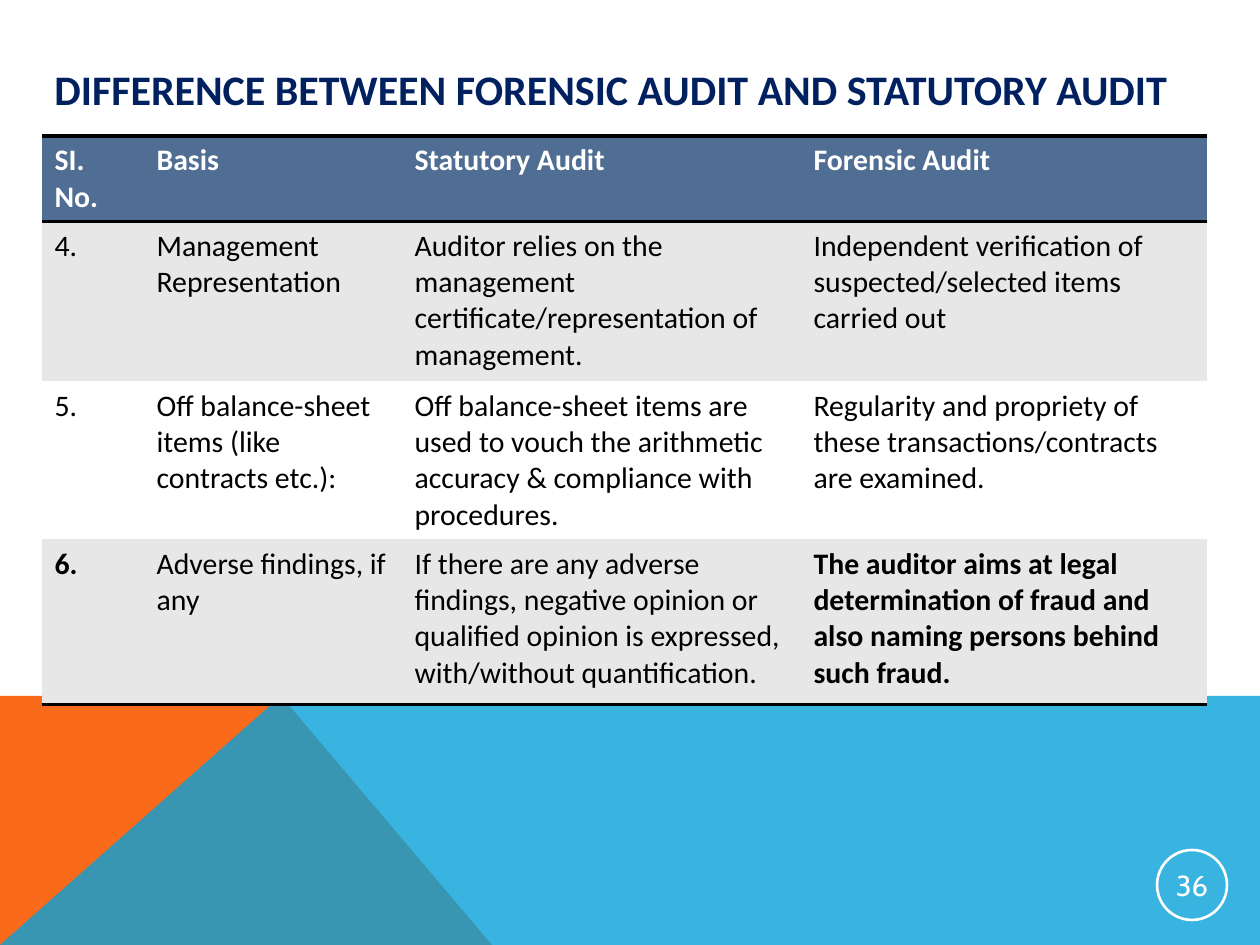
from lxml.etree import SubElement
from pptx import Presentation
from pptx.dml.color import RGBColor
from pptx.enum.shapes import MSO_SHAPE as Shape
from pptx.enum.text import MSO_ANCHOR as Anchor, PP_ALIGN as Align
from pptx.oxml import parse_xml
from pptx.oxml.ns import nsdecls, qn
from pptx.util import Pt

# Content
TITLE = "DIFFERENCE BETWEEN FORENSIC AUDIT AND STATUTORY AUDIT"
PAGE_NUMBER = "36"
ROWS = [
    ("SI. No.", "Basis", "Statutory Audit", "Forensic Audit"),
    ("4.", "Management Representation",
     "Auditor relies on the management certificate/representation of management.",
     "Independent verification of suspected/selected items carried out"),
    ("5.", "Off balance-sheet items (like contracts etc.):",
     "Off balance-sheet items are used to vouch the arithmetic accuracy & "
     "compliance with procedures.",
     "Regularity and propriety of these transactions/contracts are examined."),
    ("6.", "Adverse findings, if any",
     "If there are any adverse findings, negative opinion or qualified opinion "
     "is expressed, with/without quantification.",
     "The auditor aims at legal determination of fraud and also naming persons "
     "behind such fraud."),
]
BOLD_CELLS = {(3, 0), (3, 3)}

# Layout in px, 126 to the inch
SCALE = 914400 / 126
WIDTH, HEIGHT = 1260, 945
LEFT, CONTENT_WIDTH = 42, 1165
BAND_TOP, PEAK_X = 696, 281
COLUMN_WIDTHS = [102, 258, 399, 406]
ROW_HEIGHTS = [82, 160, 138, 165]

COLORS = {
    "orange": "F96A1B", "blue": "08A1D9", "navy": "002060", "header": "506E94",
    "stripe": "E7E7E7", "white": "FFFFFF", "black": "000000",
}


def px(value):
    return round(value * SCALE)


def box(*lengths):
    return [px(length) for length in lengths]


def color(name):
    return RGBColor.from_string(COLORS[name])


def paint(fill, name):
    fill.solid()
    fill.fore_color.rgb = color(name)


def write(text_frame, text, font_name, size, color_name, bold=False):
    text_frame.text = text
    font = text_frame.paragraphs[0].runs[0].font
    font.name, font.size, font.bold = font_name, Pt(size), bold
    font.color.rgb = color(color_name)


def add_band(slide, points, color_name):
    builder = slide.shapes.build_freeform(*points[0], scale=SCALE)
    builder.add_line_segments(points[1:], close=True)
    band = builder.convert_to_shape()
    band.shadow.inherit = False
    paint(band.fill, color_name)
    band.line.fill.background()
    return band


def set_borders(cell, ruled_sides):
    properties = cell._tc.get_or_add_tcPr()
    for index, side in enumerate(("lnL", "lnR", "lnT", "lnB")):
        if side in ruled_sides:
            content = f'<a:solidFill><a:srgbClr val="{COLORS["black"]}"/></a:solidFill>'
        else:
            content = "<a:noFill/>"
        border = parse_xml(
            f'<a:{side} {nsdecls("a")} w="{Pt(2)}">{content}</a:{side}>')
        properties.insert(index, border)


presentation = Presentation()
presentation.slide_width, presentation.slide_height = box(WIDTH, HEIGHT)
slide = presentation.slides.add_slide(presentation.slide_layouts[6])

# Bottom bands
add_band(slide, [(0, HEIGHT), (0, BAND_TOP), (PEAK_X, BAND_TOP), (492, HEIGHT)], "orange")
blue_band = add_band(
    slide, [(0, HEIGHT), (PEAK_X, BAND_TOP), (WIDTH, BAND_TOP), (WIDTH, HEIGHT)], "blue")
blue_fill = blue_band._element.spPr.find(qn("a:solidFill"))
SubElement(blue_fill[0], qn("a:alpha")).set("val", "80000")

# Comparison table
table = slide.shapes.add_table(
    len(ROWS), len(COLUMN_WIDTHS),
    *box(LEFT, 136, CONTENT_WIDTH, sum(ROW_HEIGHTS))).table
for column, width in zip(table.columns, COLUMN_WIDTHS):
    column.width = px(width)
for row, height in zip(table.rows, ROW_HEIGHTS):
    row.height = px(height)
for r, texts in enumerate(ROWS):
    is_header = r == 0
    fill_name = "header" if is_header else "stripe" if r % 2 else "white"
    ruled_sides = {0: ("lnT", "lnB"), 1: ("lnT",), len(ROWS) - 1: ("lnB",)}.get(r, ())
    for c, text in enumerate(texts):
        cell = table.cell(r, c)
        write(cell.text_frame, text, "Calibri", 17,
              "white" if is_header else "black", is_header or (r, c) in BOLD_CELLS)
        paint(cell.fill, fill_name)
        set_borders(cell, ruled_sides)

# Title
title = slide.shapes.add_textbox(*box(LEFT, 21, CONTENT_WIDTH, 136)).text_frame
title.word_wrap = True
title.vertical_anchor = Anchor.MIDDLE
write(title, TITLE, "Calibri", 24, "navy", bold=True)

# Page number badge
badge = slide.shapes.add_shape(Shape.OVAL, *box(1157, 850, 70, 70))
badge.shadow.inherit = False
badge.fill.background()
badge.line.color.rgb = color("white")
badge.line.width = Pt(1.5)
number = badge.text_frame
number.margin_left = number.margin_right = number.margin_top = number.margin_bottom = px(1)
number.vertical_anchor = Anchor.MIDDLE
number.word_wrap = False
write(number, PAGE_NUMBER, "Cabin", 16.5, "white")
number.paragraphs[0].alignment = Align.CENTER

presentation.save("out.pptx")
